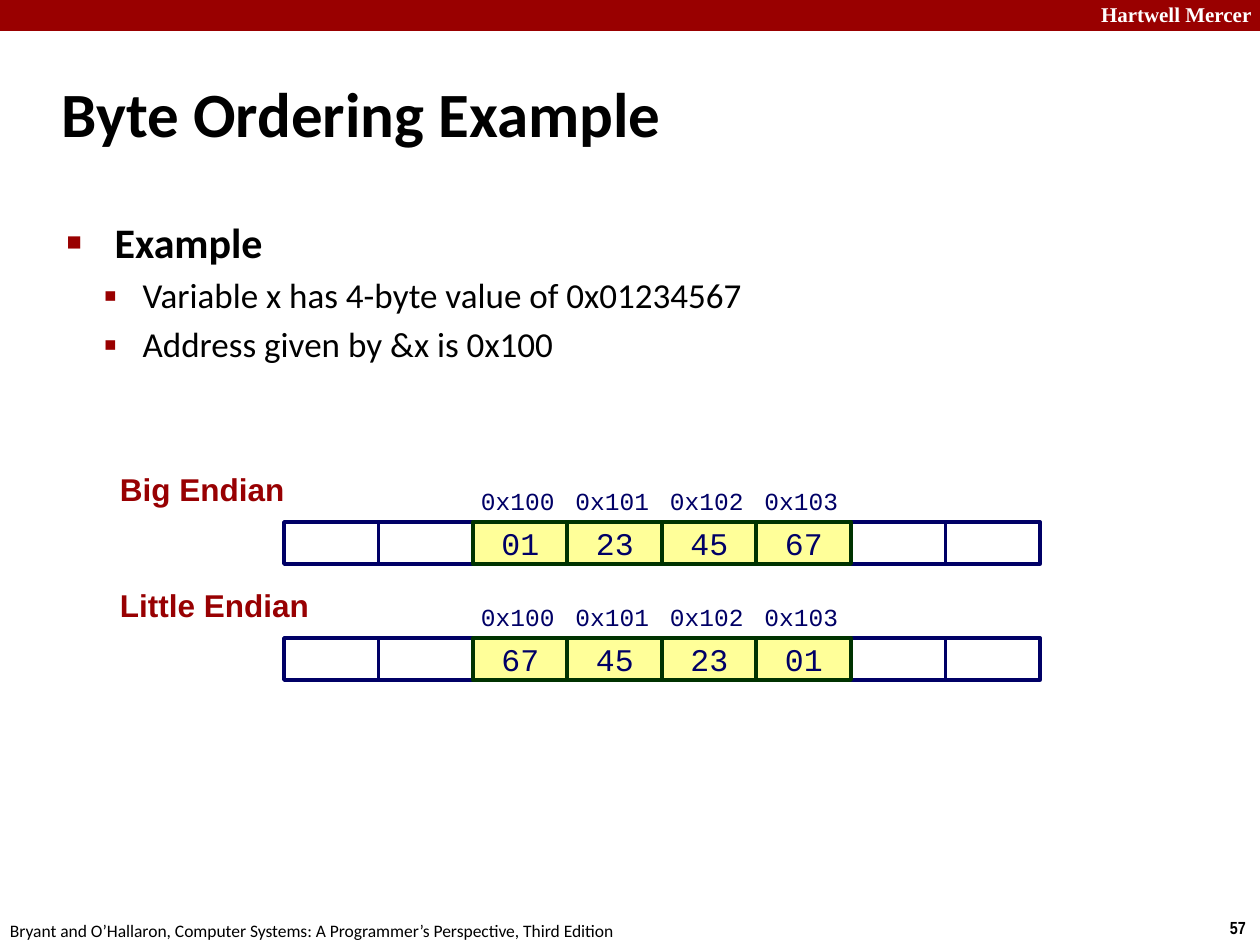
"""Build the byte ordering example slide."""
import pptx
import pptx.dml.color
import pptx.enum.shapes
import pptx.enum.text
import pptx.oxml
import pptx.oxml.ns
import pptx.util

EMU_PER_PX = 914400 / 126
CRIMSON, LABEL_RED, NAVY, GREEN = "990000", "980002", "000066", "003300"
BLACK, WHITE, YELLOW = "000000", "FFFFFF", "FFFF99"

STRIP_LEFT, STRIP_WIDTH, CELL_COUNT, CELL_HEIGHT = 284, 756, 8, 42
CELL_WIDTH = STRIP_WIDTH / CELL_COUNT
FIRST_BYTE = 2
ADDRESSES = ["0x100", "0x101", "0x102", "0x103"]
BYTE_ORDERS = [
    ("Big Endian", 522, ["01", "23", "45", "67"]),
    ("Little Endian", 638, ["67", "45", "23", "01"]),
]
BODY_LINES = [
    ("Example", 0),
    ("Variable x has 4-byte value of 0x01234567", 1),
    ("Address given by &x is 0x100", 1),
]
# Each level: margin px, indent px, bullet, bullet size %, text points, bold
LEVELS = [(48, -48, "■", 60, 24, True), (76, -39, "▪", 110, 20, False)]


def px(length):
    """Turn pixels into EMU."""
    return pptx.util.Emu(round(length * EMU_PER_PX))


def color(hex_code):
    """Turn a hex string into a colour."""
    return pptx.dml.color.RGBColor.from_string(hex_code)


def place(shape, left, top, width, height):
    """Move and size a shape in pixels."""
    shape.left, shape.top = px(left), px(top)
    shape.width, shape.height = px(width), px(height)


def style(paragraph, font, size, hex_code, bold=False):
    """Format every run of a paragraph."""
    for run in paragraph.runs:
        run.font.name = font
        run.font.size = pptx.util.Pt(size)
        run.font.bold = bold
        run.font.color.rgb = color(hex_code)


def add_text(shapes, text, box, font, size, hex_code, bold=False,
             margins=(13, 6), wrap=True, anchor="TOP"):
    """Add a text box with one line of text."""
    frame = shapes.add_textbox(*map(px, box)).text_frame
    frame.word_wrap = wrap
    frame.vertical_anchor = pptx.enum.text.MSO_ANCHOR[anchor]
    frame.margin_left = frame.margin_right = px(margins[0])
    frame.margin_top = frame.margin_bottom = px(margins[1])
    frame.text = text
    style(frame.paragraphs[0], font, size, hex_code, bold)
    return frame.paragraphs[0]


def add_box(shapes, box, fill, line=None, weight=2):
    """Add a flat rectangle."""
    rectangle = shapes.add_shape(
        pptx.enum.shapes.MSO_SHAPE.RECTANGLE, *map(px, box))
    rectangle.shadow.inherit = False
    rectangle.fill.solid()
    rectangle.fill.fore_color.rgb = color(fill)
    if line:
        rectangle.line.color.rgb = color(line)
        rectangle.line.width = pptx.util.Pt(weight)
    else:
        rectangle.line.fill.background()
    return rectangle


def add_byte(shapes, box, value):
    """Add a filled memory cell that shows its byte."""
    cell = add_box(shapes, box, YELLOW, GREEN, 2.25)
    frame = cell.text_frame
    frame.margin_top = frame.margin_bottom = 0
    frame.word_wrap = False
    frame.vertical_anchor = pptx.enum.text.MSO_ANCHOR.MIDDLE
    frame.text = value
    frame.paragraphs[0].alignment = pptx.enum.text.PP_ALIGN.CENTER
    style(frame.paragraphs[0], "Courier New", 18, NAVY)


def add_memory(slide, label, top, values):
    """Add a labelled strip of memory cells with addresses."""
    caption = add_text(slide.shapes, label, (116, top - 53, 247, 45), "Arial",
                       18, LABEL_RED, True, margins=(4, 4))
    caption.line_spacing = 0.95
    shapes = slide.shapes.add_group_shape().shapes
    boxes = [(STRIP_LEFT + i * CELL_WIDTH, top, CELL_WIDTH, CELL_HEIGHT)
             for i in range(CELL_COUNT)]
    byte_end = FIRST_BYTE + len(values)
    for box in boxes[:FIRST_BYTE] + boxes[byte_end:]:
        add_box(shapes, box, WHITE, NAVY)
    for box, address, value in zip(boxes[FIRST_BYTE:byte_end], ADDRESSES, values):
        left, _, width, height = box
        add_text(shapes, address, (left, top - height, width, height),
                 "Courier New", 14, NAVY, margins=(8, 8), wrap=False,
                 anchor="MIDDLE")
        add_byte(shapes, box, value)


def set_bullet(paragraph, margin, indent, symbol, percent):
    """Give a paragraph its indents and a crimson bullet."""
    properties = paragraph._p.get_or_add_pPr()
    properties.set("marL", str(px(margin)))
    properties.set("indent", str(px(indent)))
    namespace = pptx.oxml.ns.nsdecls("a")
    for markup in (
        f'<a:buClr {namespace}><a:srgbClr val="{CRIMSON}"/></a:buClr>',
        f'<a:buSzPct {namespace} val="{percent * 1000}"/>',
        f'<a:buFont {namespace} typeface="Arial"/>',
        f'<a:buChar {namespace} char="{symbol}"/>',
    ):
        properties.append(pptx.oxml.parse_xml(markup))


def fill_title(title):
    """Write the slide title."""
    place(title, 49, 60, 1046, 105)
    title.text_frame.text = "Byte Ordering Example"
    title.text_frame.auto_size = pptx.enum.text.MSO_AUTO_SIZE.NONE
    title.text_frame.vertical_anchor = pptx.enum.text.MSO_ANCHOR.MIDDLE
    heading = title.text_frame.paragraphs[0]
    heading.alignment = pptx.enum.text.PP_ALIGN.LEFT
    style(heading, "Calibri", 36, BLACK, True)


def fill_body(body):
    """Write the bulleted list."""
    place(body, 54, 210, 1089, 663)
    frame = body.text_frame
    frame.text = "\n".join(text for text, _ in BODY_LINES)
    frame.auto_size = pptx.enum.text.MSO_AUTO_SIZE.NONE
    for paragraph, (_, level) in zip(frame.paragraphs, BODY_LINES):
        margin, indent, symbol, percent, size, bold = LEVELS[level]
        paragraph.level = level
        set_bullet(paragraph, margin, indent, symbol, percent)
        style(paragraph, "Calibri", size, BLACK, bold)


def add_frame(slide):
    """Add the top band, the footer and the page number."""
    shapes = slide.shapes
    add_box(shapes, (0, 0, 1260, 31), CRIMSON)
    add_text(shapes, "Hartwell Mercer", (1088, -4, 181, 38),
             "Times New Roman", 12, WHITE, True)
    add_text(shapes, "57", (1217, 911, 43, 34), "Arial Narrow", 10, BLACK,
             True, wrap=False)
    add_text(shapes, "Bryant and O’Hallaron, Computer Systems: "
             "A Programmer’s Perspective, Third Edition",
             (-3, 914, 640, 34), "Calibri", 10, BLACK, wrap=False)


def main():
    """Build and save the slide."""
    deck = pptx.Presentation()
    deck.slide_width, deck.slide_height = px(1260), px(945)
    slide = deck.slides.add_slide(deck.slide_layouts[1])
    add_frame(slide)
    fill_title(slide.shapes.title)
    fill_body(slide.placeholders[1])
    for label, top, values in BYTE_ORDERS:
        add_memory(slide, label, top, values)
    deck.save("out.pptx")


if __name__ == "__main__":
    main()
